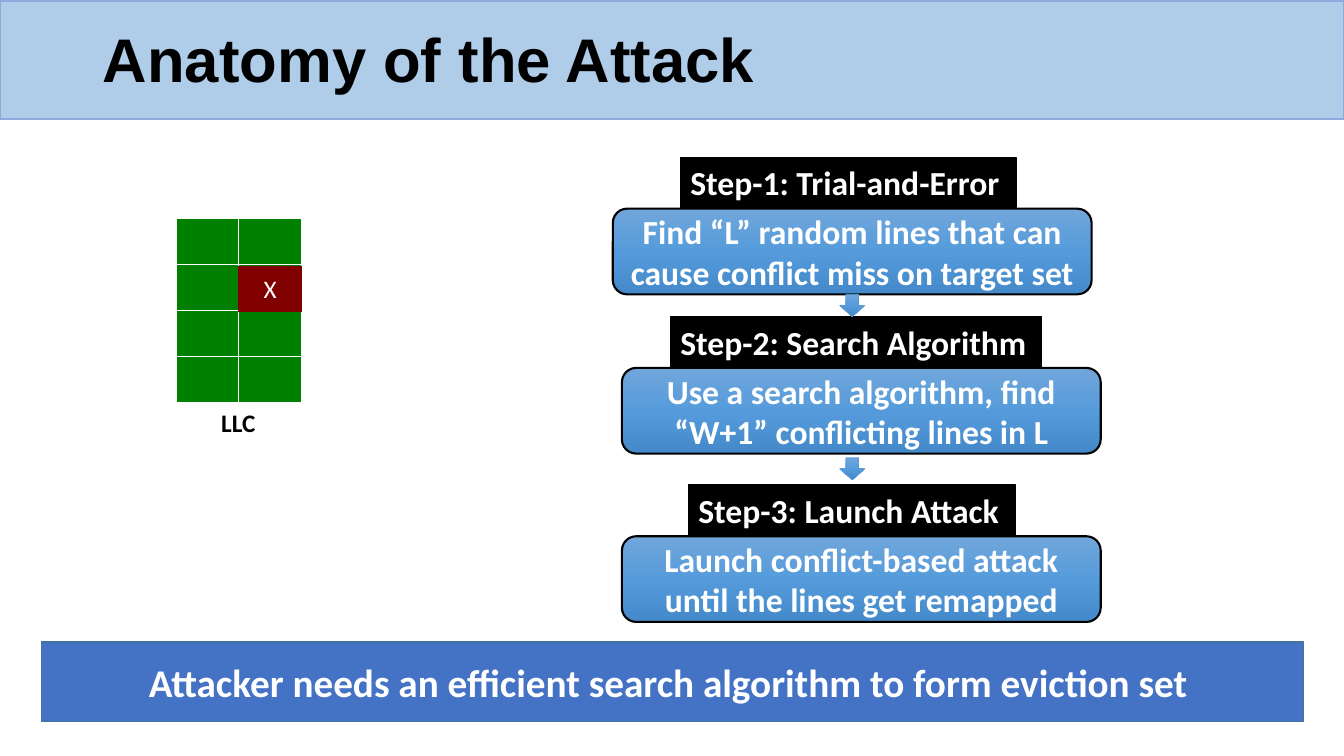
"""Build the slide on the anatomy of a cache attack, on a 160 by 90 grid."""
import copy

import pptx
import pptx.dml.color
import pptx.enum.shapes
import pptx.enum.text
import pptx.util

KIND = pptx.enum.shapes.MSO_SHAPE
ALIGN = pptx.enum.text.PP_ALIGN
MIDDLE = pptx.enum.text.MSO_ANCHOR.MIDDLE
TOP = pptx.enum.text.MSO_ANCHOR.TOP
WIDE, HIGH = pptx.util.Inches(13.33), pptx.util.Inches(7.5)
COLS, ROWS = 160, 90
BLUES = ["71A6DB", "559BDB", "448ACA"]
STEPS = [
    (18.72, 81, 39.96, 72.96, "Step-1: Trial-and-Error",
     "Find “L” random lines that can cause conflict miss on target set"),
    (37.68, 79.8, 44.16, 74.04, "Step-2: Search Algorithm",
     "Use a search algorithm, find “W+1” conflicting lines in L"),
    (57.72, 81.96, 38.88, 74.04, "Step-3: Launch Attack",
     "Launch conflict-based attack until the lines get remapped"),
]


def apply(item, form):
    for name, value in form.items():
        setattr(item, name, value)


def paint(color, code):
    color.rgb = pptx.dml.color.RGBColor.from_string(code)


def place(x, y, w, h):
    return {"left": round(x * WIDE / COLS), "top": round(y * HIGH / ROWS),
            "width": round(w * WIDE / COLS), "height": round(h * HIGH / ROWS)}


def write(shape, text, size, code="FFFFFF", bold=True, face="Calibri",
          align=ALIGN.CENTER, anchor=MIDDLE, wrap=True, space=1.0):
    frame = shape.text_frame
    frame.text = text
    apply(frame, {"word_wrap": wrap, "vertical_anchor": anchor,
                  "auto_size": pptx.enum.text.MSO_AUTO_SIZE.NONE})
    para = frame.paragraphs[0]
    apply(para, {"alignment": align, "line_spacing": space})
    font = para.runs[0].font
    apply(font, {"name": face, "size": pptx.util.Pt(size), "bold": bold})
    paint(font.color, code)


def shade(fill):
    """Give a fill a top-to-bottom gradient of three blues."""
    fill.gradient()
    fill.gradient_angle = 270
    last = fill.gradient_stops[1]
    node = last._gs
    node.addnext(copy.deepcopy(node))
    for stop, spot, code in zip(fill.gradient_stops, [0, 0.5, 1], BLUES):
        stop.position = spot
        paint(stop.color, code)


def block(slide, kind, area, fill, edge, width):
    shape = slide.shapes.add_shape(kind, **place(*area))
    shape.shadow.inherit = False
    if fill:
        shape.fill.solid()
        paint(shape.fill.fore_color, fill)
    else:
        shade(shape.fill)
    paint(shape.line.color, edge)
    shape.line.width = pptx.util.Pt(width)
    return shape


def header(slide, text):
    bar = block(slide, KIND.RECTANGLE, (0, 0.12, 160, 14.04),
                "AFCCE9", "8FAADC", 1)
    title = slide.shapes.title
    title.element.addprevious(bar.element)
    apply(title, place(11.04, 2.76, 138, 9.36))
    write(title, text, 44, "000000", face="Arial", align=ALIGN.LEFT, space=0.9)


def cache(slide, left, top):
    wide, high, pitch = 7.44, 5.4, 5.48
    for row in range(4):
        for col in range(2):
            area = (left + col * wide, top + row * pitch, wide, high)
            block(slide, KIND.RECTANGLE, area, "008000", "FFFFFF", 0.5)
    label = slide.shapes.add_textbox(**place(25.08, 47.88, 6.6, 4.8))
    write(label, "LLC", 18, "000000", anchor=TOP, wrap=False)
    mark = block(slide, KIND.RECTANGLE, (left + wide, 31.68, wide, high),
                 "800000", "800000", 0.5)
    write(mark, "X", 18, bold=False)


def step(slide, top, left, wide, edge, name, text):
    body = block(slide, KIND.ROUNDED_RECTANGLE, (edge, top + 6.12, 57, 10.2),
                 None, "000000", 1.5)
    write(body, text, 24)
    tag = block(slide, KIND.RECTANGLE, (left, top, wide, 6),
                "000000", "000000", 0.75)
    write(tag, name, 24, align=ALIGN.LEFT, anchor=TOP)


def main():
    deck = pptx.Presentation()
    apply(deck, {"slide_width": WIDE, "slide_height": HIGH})
    slide = deck.slides.add_slide(deck.slide_layouts.get_by_name("Title Only"))
    header(slide, "Anatomy of the Attack")
    banner = block(slide, KIND.RECTANGLE, (4.92, 76.44, 150.24, 9.48),
                   "4472C4", "43739E", 1)
    write(banner,
          "Attacker needs an efficient search algorithm to form eviction set ",
          28)
    cache(slide, 21, 26.04)
    for item in STEPS:
        step(slide, *item)
    for top in (35.04, 54.48):
        block(slide, KIND.DOWN_ARROW, (99.96, top, 3, 2.64),
              None, "5B9BD5", 0.5)
    deck.save("out.pptx")


if __name__ == "__main__":
    main()
